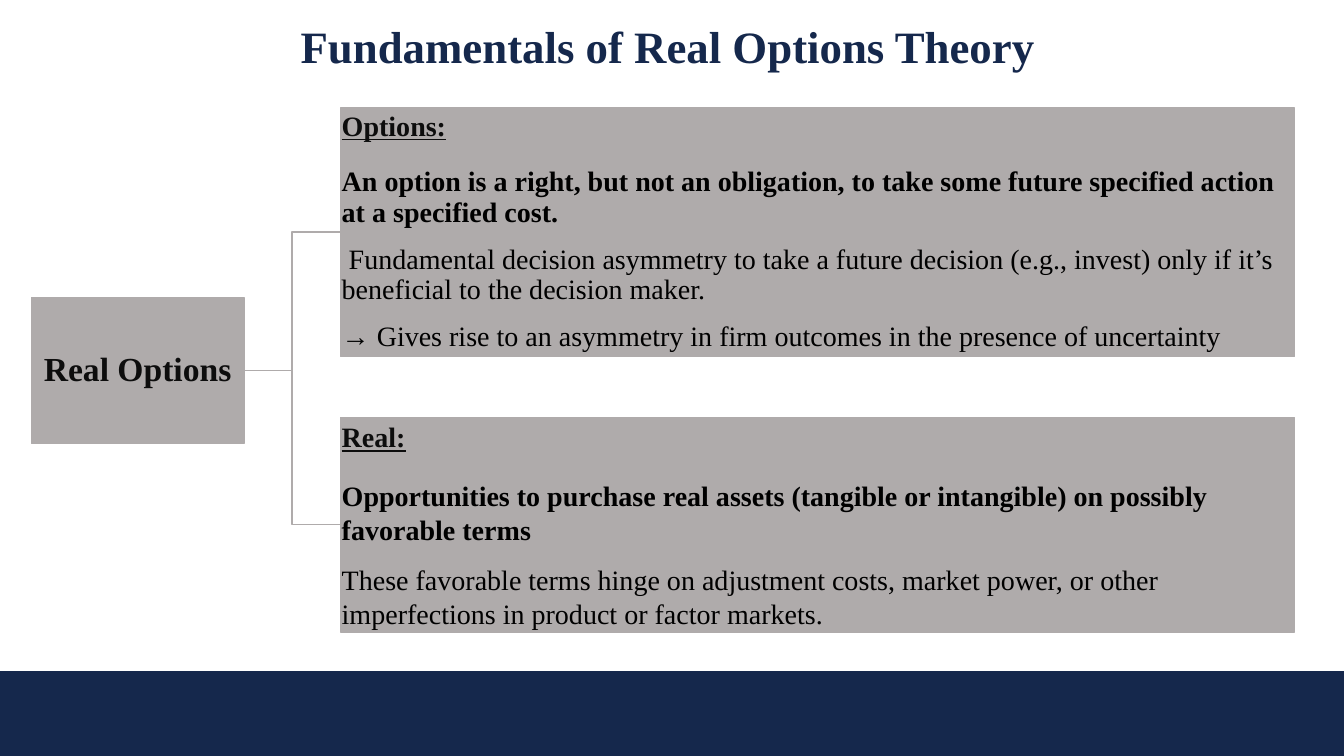
from pptx import Presentation
from pptx.dml.color import RGBColor
from pptx.enum.shapes import MSO_CONNECTOR, MSO_SHAPE
from pptx.enum.text import MSO_ANCHOR, PP_ALIGN
from pptx.oxml.ns import qn
from pptx.util import Pt
from lxml import etree

RECTANGLE = MSO_SHAPE.RECTANGLE
ELBOW = MSO_CONNECTOR.ELBOW
MIDDLE = MSO_ANCHOR.MIDDLE
LEFT, CENTER = PP_ALIGN.LEFT, PP_ALIGN.CENTER
RIGHT_SIDE, LEFT_SIDE = 3, 1
EMU_PER_PX = 9144
FONT = "Times New Roman"
NAVY, GRAY, INK, BLACK = "15284C", "AFABAB", "0D0D0D", "000000"

OPTIONS = [
    "Options:",
    "An option is a right, but not an obligation, to take some future specified action "
    "at a specified cost.",
    " Fundamental decision asymmetry to take a future decision (e.g., invest) only if it’s "
    "beneficial to the decision maker.",
    "→ Gives rise to an asymmetry in firm outcomes in the presence of uncertainty",
]
REAL = [
    "Real:",
    "Opportunities to purchase real assets (tangible or intangible) on possibly favorable terms",
    "These favorable terms hinge on adjustment costs, market power, or other "
    "imperfections in product or factor markets.",
]


def px(length):
    """Turn a length in px into EMU."""
    return round(length * EMU_PER_PX)


def rgb(value):
    """Turn a hex string into a colour."""
    return RGBColor.from_string(value)


def write(paragraph, text, size=20, color=BLACK, bold=False, underline=False,
          align=LEFT, spacing=1.0, after=0):
    """Put formatted text into a paragraph."""
    paragraph.alignment = align
    paragraph.line_spacing = spacing
    paragraph.space_before = Pt(0)
    paragraph.space_after = Pt(after)
    run = paragraph.add_run()
    run.text = text
    font = run.font
    font.name, font.size, font.color.rgb = FONT, Pt(size), rgb(color)
    font.bold, font.underline = bold, underline


def add_block(slide, box, color, inset=0):
    """Add a filled rectangle whose text is centred vertically."""
    block = slide.shapes.add_shape(RECTANGLE, *map(px, box))
    block.shadow.inherit = False
    block.fill.solid()
    block.fill.fore_color.rgb = rgb(color)
    block.line.color.rgb = rgb(color)
    block.line.width = Pt(1)
    frame = block.text_frame
    frame.word_wrap = True
    frame.vertical_anchor = MIDDLE
    frame.margin_left = frame.margin_right = px(inset)
    frame.margin_top = frame.margin_bottom = px(inset)
    return block


def add_title(slide, box, text):
    """Move and fill the title placeholder."""
    title = slide.shapes.title
    title.left, title.top, title.width, title.height = map(px, box)
    title.text_frame.vertical_anchor = MIDDLE
    write(title.text_frame.paragraphs[0], text, size=32, color=NAVY, bold=True,
          align=CENTER, spacing=0.9)


def add_topic(slide, box, text):
    """Add the root block of the tree."""
    topic = add_block(slide, box, GRAY, inset=2)
    write(topic.text_frame.paragraphs[0], text, size=24, color=INK, bold=True,
          align=CENTER, spacing=0.9)
    return topic


def add_definition(slide, box, texts, spacing):
    """Add a block with an underlined term, a bold definition and details."""
    definition = add_block(slide, box, GRAY, inset=1)
    frame = definition.text_frame
    for level, text in enumerate(texts):
        is_term = level == 0
        paragraph = frame.paragraphs[0] if is_term else frame.add_paragraph()
        write(paragraph, text, color=INK if is_term else BLACK, bold=level < 2,
              underline=is_term, spacing=spacing, after=18 if is_term else 12)
    return definition


def add_branch(slide, topic, definition):
    """Join the topic to a definition with an elbow line."""
    branch = slide.shapes.add_connector(ELBOW, 0, 0, 0, 0)
    branch.begin_connect(topic, RIGHT_SIDE)
    branch.end_connect(definition, LEFT_SIDE)
    branch.line.color.rgb = rgb(GRAY)
    branch.line.width = Pt(1.25)
    etree.SubElement(branch._element.spPr, qn("a:effectLst"))


def add_tree(slide, left, top):
    """Add the topic, its two definitions and their branches."""
    topic = add_topic(slide, (left, top + 188, 211, 145), "Real Options")
    for offset, height, texts, spacing in ((0, 247, OPTIONS, 0.9), (307, 213, REAL, 1.0)):
        box = (left + 307, top + offset, 946, height)
        add_branch(slide, topic, add_definition(slide, box, texts, spacing))


def main():
    """Build and save the presentation."""
    deck = Presentation()
    deck.slide_width, deck.slide_height = px(1333), px(750)
    slide = deck.slides.add_slide(deck.slide_layouts[5])
    add_block(slide, (0, 666, 1333, 84), NAVY)
    add_title(slide, (-9, 14, 1343, 69), "Fundamentals of Real Options Theory")
    add_tree(slide, 31, 107)
    deck.save("out.pptx")


if __name__ == "__main__":
    main()
